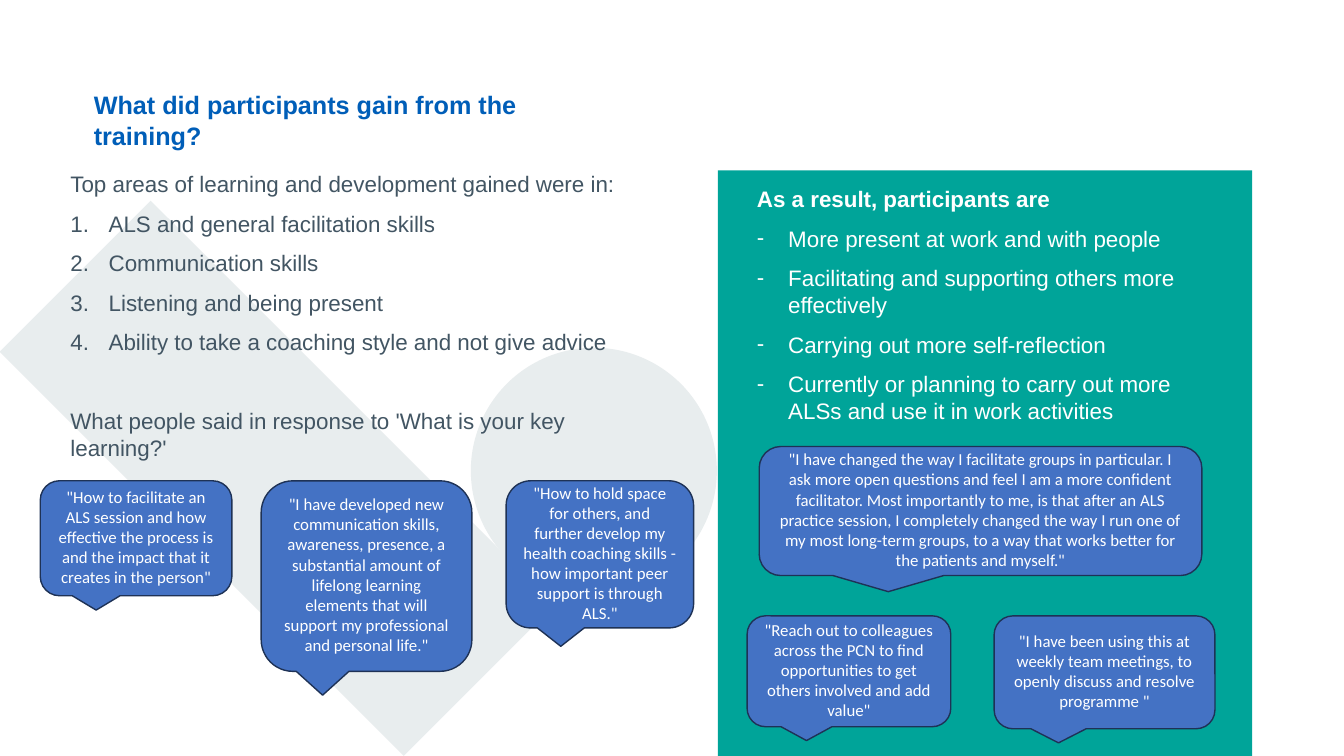
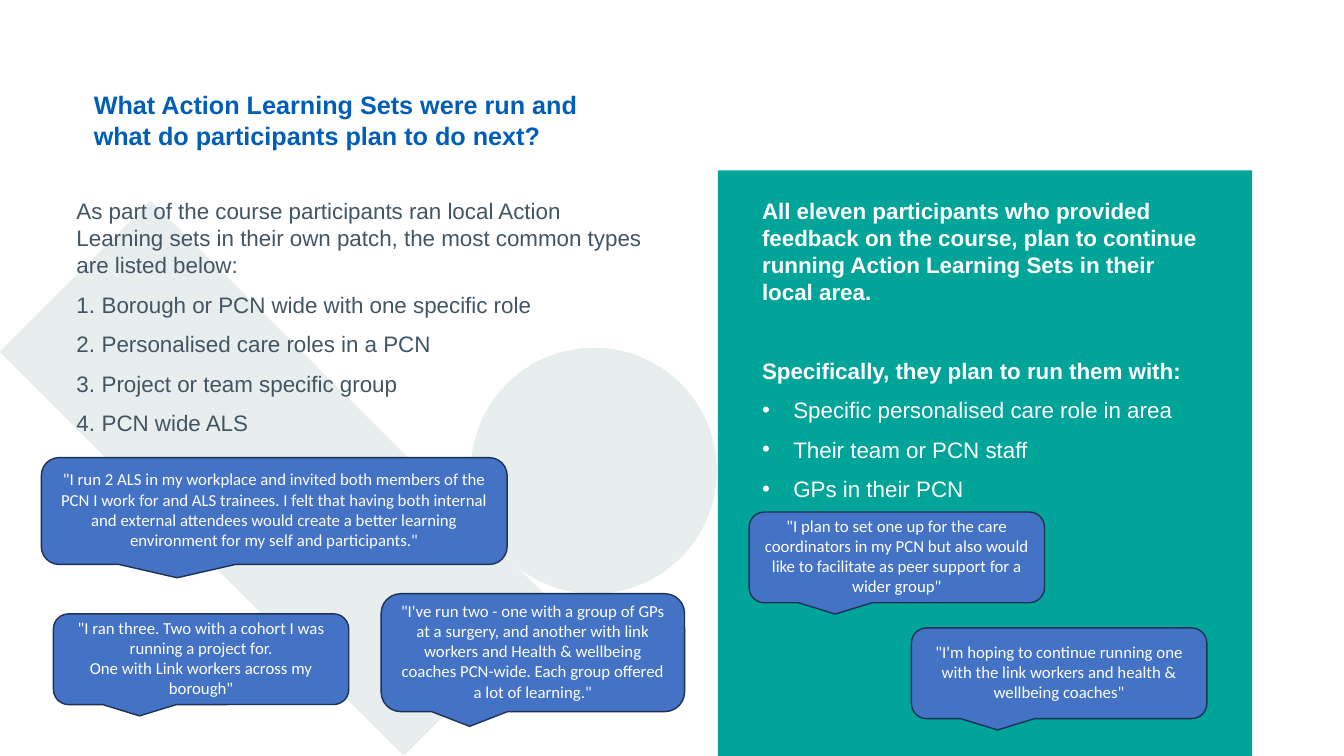
from dataclasses import dataclass

from lxml import etree
from pptx import Presentation
from pptx import util as u
from pptx.dml.color import RGBColor
from pptx.enum import shapes, text
from pptx.oxml import ns


@dataclass(frozen=True)
class Theme:
    blue: str = "005EB8"
    slate: str = "425563"
    mist: str = "E8EDEE"
    teal: str = "00A499"
    white: str = "FFFFFF"
    quote_fill: str = "4472C4"
    quote_line: str = "1E3256"
    body_font: str = "Arial"
    quote_font: str = "Calibri"
    title_size: int = 18
    body_size: int = 16
    quote_size: int = 12
    line_spacing: float = 1.0
    space_after: int = 9
    section_gap: int = 28
    quote_bottom_inset: float = 0.08


@dataclass(frozen=True)
class Line:
    words: str
    bold: bool = False
    bullet: str = ""
    indent: float = 0
    space_before: int = 0


THEME = Theme()
NUMBER = "number"


def bullets(marker, indent, items):
    return [Line(item, bullet=marker, indent=indent) for item in items]


def inches(box):
    return [u.Inches(length) for length in box]


def place(shape, box):
    shape.left, shape.top, shape.width, shape.height = inches(box)


def add_run(paragraph, words, font_name, size, color, bold=False):
    run = paragraph.add_run()
    run.text = words
    run.font.name = font_name
    run.font.size = u.Pt(size)
    run.font.bold = bold
    run.font.color.rgb = RGBColor.from_string(color)


def set_bullet(paragraph, marker, indent):
    properties = paragraph._p.get_or_add_pPr()
    properties.set("marL", str(u.Inches(indent)))
    properties.set("indent", str(-u.Inches(indent)))
    if marker == NUMBER:
        etree.SubElement(properties, ns.qn("a:buAutoNum"), type="arabicPeriod")
    else:
        etree.SubElement(properties, ns.qn("a:buFont"), typeface=THEME.body_font)
        etree.SubElement(properties, ns.qn("a:buChar"), char=marker)


def add_block(slide, kind, box, color):
    shape = slide.shapes.add_shape(kind, *inches(box))
    shape.shadow.inherit = False
    shape.fill.solid()
    shape.fill.fore_color.rgb = RGBColor.from_string(color)
    shape.line.fill.background()
    return shape


def move_backdrop_to_layout(slide):
    kinds = shapes.MSO_SHAPE
    circle = add_block(slide, kinds.OVAL, (4.67, 3.45, 2.44, 2.44), THEME.mist)
    band = add_block(slide, kinds.RECTANGLE, (1.69, 1.91, 2.12, 5.67), THEME.mist)
    band.rotation = 315
    panel = add_block(slide, kinds.RECTANGLE, (7.12, 1.69, 5.3, 5.81), THEME.teal)
    for number, shape in enumerate((circle, band, panel), start=100):
        shape.element.nvSpPr.cNvPr.id = number
        slide.slide_layout.shapes.element.append(shape.element)


def add_title(slide, words):
    title = slide.shapes.title
    place(title, (0.83, 0.84, 5.25, 0.8))
    frame = title.text_frame
    frame.word_wrap = True
    frame.auto_size = text.MSO_AUTO_SIZE.NONE
    frame.vertical_anchor = text.MSO_ANCHOR.TOP
    paragraph = frame.paragraphs[0]
    paragraph.alignment = text.PP_ALIGN.LEFT
    paragraph.line_spacing = THEME.line_spacing
    add_run(paragraph, words, THEME.body_font, THEME.title_size, THEME.blue, True)


def add_body(slide, box, color, lines):
    frame = slide.shapes.add_textbox(*inches(box)).text_frame
    frame.word_wrap = True
    for index, line in enumerate(lines):
        paragraph = frame.add_paragraph() if index else frame.paragraphs[0]
        if line.bullet:
            set_bullet(paragraph, line.bullet, line.indent)
        paragraph.line_spacing = THEME.line_spacing
        paragraph.space_before = u.Pt(line.space_before)
        paragraph.space_after = u.Pt(THEME.space_after)
        add_run(paragraph, line.words, THEME.body_font, THEME.body_size, color, line.bold)


def add_quote(slide, box, words):
    callout = add_block(slide, shapes.MSO_SHAPE.ROUNDED_RECTANGULAR_CALLOUT, box, THEME.quote_fill)
    callout.line.color.rgb = RGBColor.from_string(THEME.quote_line)
    callout.line.width = u.Pt(1)
    frame = callout.text_frame
    frame.word_wrap = True
    frame.margin_bottom = u.Inches(THEME.quote_bottom_inset)
    frame.vertical_anchor = text.MSO_ANCHOR.MIDDLE
    paragraph = frame.paragraphs[0]
    paragraph.alignment = text.PP_ALIGN.CENTER
    for index, part in enumerate(words.split("\n")):
        if index:
            paragraph.add_line_break()
        add_run(paragraph, part, THEME.quote_font, THEME.quote_size, THEME.white)


def fill_slide(slide, title, bodies, quotes):
    add_title(slide, title)
    for box, color, lines in bodies:
        add_body(slide, box, color, lines)
    for box, words in quotes:
        add_quote(slide, box, words)


def fill_gains(slide):
    learning = [
        Line("Top areas of learning and development gained were in:"),
        *bullets(NUMBER, 0.38, [
            "ALS and general facilitation skills",
            "Communication skills",
            "Listening and being present",
            "Ability to take a coaching style and not give advice",
        ]),
        Line("What people said in response to 'What is your key learning?'",
             space_before=THEME.section_gap),
    ]
    results = [
        Line("As a result, participants are", bold=True),
        *bullets("-", 0.31, [
            "More present at work and with people",
            "Facilitating and supporting others more effectively",
            "Carrying out more self-reflection",
            "Currently or planning to carry out more ALSs and use it in work activities",
        ]),
    ]
    bodies = [
        ((0.6, 1.64, 6.07, 5.44), THEME.slate, learning),
        ((7.41, 1.79, 4.64, 5.45), THEME.white, results),
    ]
    quotes = [
        ((0.4, 4.77, 1.9, 1.14),
         '"How to facilitate an ALS session and how effective the process is '
         'and the impact that it creates in the person"'),
        ((2.59, 4.77, 2.09, 1.89),
         '"I have developed new communication skills, awareness, presence, '
         'a substantial amount of lifelong learning elements that will support '
         'my professional and personal life."'),
        ((5.02, 4.77, 1.86, 1.46),
         '"How to hold space for others, and\nfurther develop my\nhealth coaching '
         'skills -\nhow important peer support is through ALS."'),
        ((7.53, 4.43, 4.39, 1.28),
         '"I have changed the way I facilitate groups in particular. I\nask more '
         'open questions and feel I am a more confident facilitator. Most '
         'importantly to me, is that after an ALS practice session, I completely '
         'changed the way I run one of my most long-term groups, to a way that '
         'works better for the patients and myself."'),
        ((9.86, 6.11, 2.19, 1.12),
         '"I have been using this at weekly team meetings, to openly discuss '
         'and resolve programme "'),
        ((7.41, 6.11, 2.02, 1.1),
         '"Reach out to colleagues across the PCN to find opportunities to get '
         'others involved and add value"'),
    ]
    fill_slide(slide, "What did participants gain from the training?", bodies, quotes)


def fill_next_steps(slide):
    sets_run = [
        Line("As part of the course participants ran local Action Learning sets in "
             "their own patch, the most common types are listed below:"),
        *bullets(NUMBER, 0.25, [
            "Borough or PCN wide with one specific role",
            "Personalised care roles in a PCN",
            "Project or team specific group",
            "PCN wide ALS",
        ]),
    ]
    plans = [
        Line("All eleven participants who provided feedback on the course, plan to "
             "continue running Action Learning Sets in their local area.", bold=True),
        Line("Specifically, they plan to run them with:", bold=True,
             space_before=THEME.section_gap),
        *bullets("•", 0.31, [
            "Specific personalised care role in area",
            "Their team or PCN staff",
            "GPs in their PCN",
        ]),
    ]
    bodies = [
        ((0.66, 1.91, 5.89, 4.49), THEME.slate, sets_run),
        ((7.46, 1.91, 4.51, 3.15), THEME.white, plans),
    ]
    small = (2.93, 0.9)
    quotes = [
        ((0.53, 6.09, *small),
         '"I ran three. Two with a cohort I was running a project for.\n'
         'One with Link workers across my borough"'),
        ((3.78, 5.89, 3.01, 1.17),
         '"I\'ve run two - one with a group of GPs at a surgery, and another with '
         'link workers and Health & wellbeing coaches PCN-wide. Each group '
         'offered a lot of learning."'),
        ((0.41, 4.54, 4.62, 1.06),
         '"I run 2 ALS in my workplace and invited both members of the PCN I work '
         'for and ALS trainees. I felt that having both internal and external '
         'attendees would create a better learning environment for my self and '
         'participants."'),
        ((7.43, 5.08, *small),
         '"I plan to set one up for the care coordinators in my PCN but also would '
         'like to facilitate as peer support for a wider group"'),
        ((9.04, 6.23, *small),
         '"I\'m hoping to continue running one with the link workers and health & '
         'wellbeing coaches"'),
    ]
    fill_slide(slide, "What Action Learning Sets were run and what do participants plan to do next?",
               bodies, quotes)


def main():
    presentation = Presentation()
    presentation.slide_width, presentation.slide_height = inches((13.33, 7.5))
    layout = presentation.slide_layouts[5]
    gains, next_steps = [presentation.slides.add_slide(layout) for _ in range(2)]
    move_backdrop_to_layout(gains)
    fill_gains(gains)
    fill_next_steps(next_steps)
    presentation.save("out.pptx")


if __name__ == "__main__":
    main()
